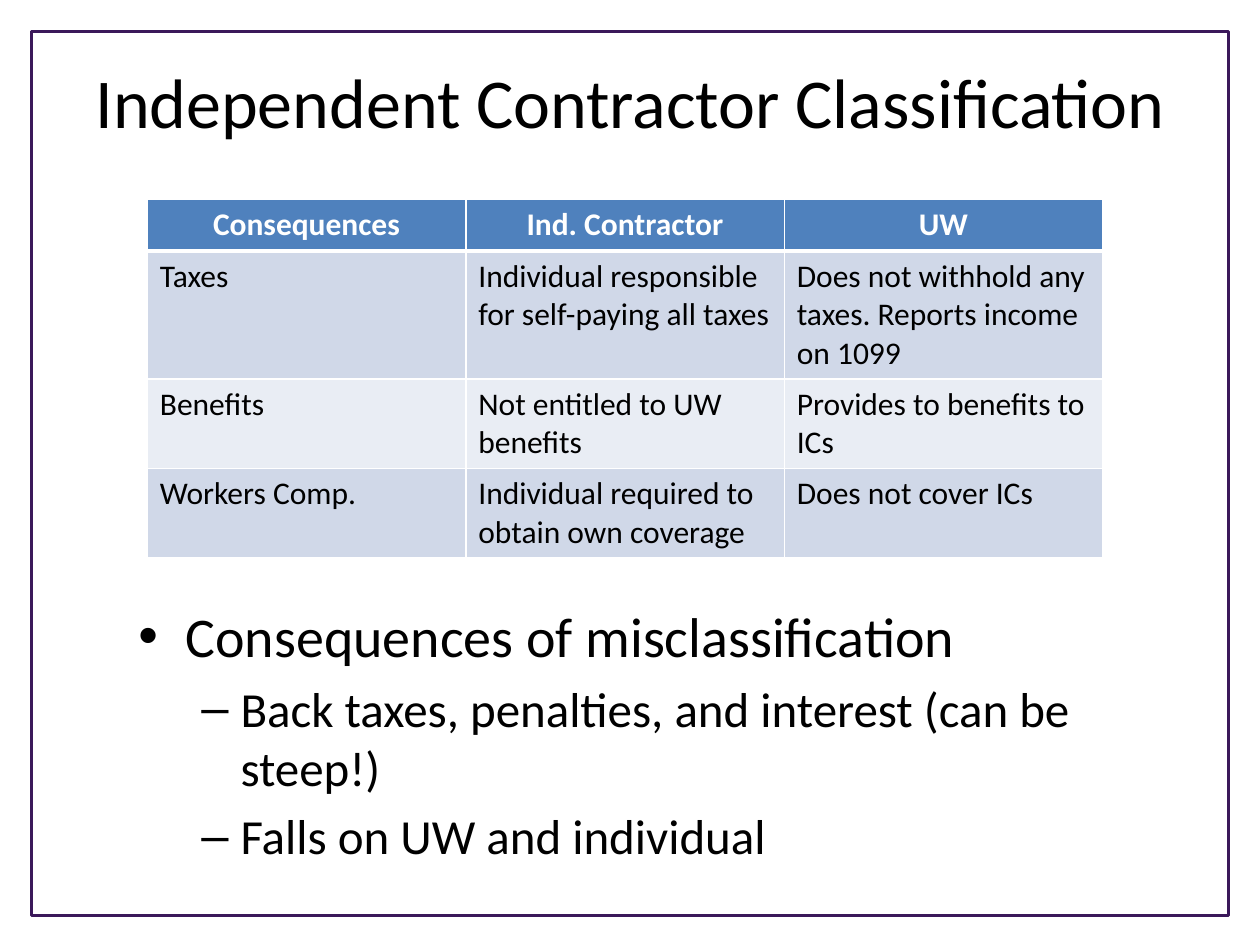
from lxml import etree
from pptx import Presentation
from pptx.dml.color import RGBColor
from pptx.enum.shapes import MSO_SHAPE
from pptx.enum.text import MSO_ANCHOR, PP_ALIGN
from pptx.oxml.ns import qn
from pptx.util import Cm, Pt

RECTANGLE = MSO_SHAPE.RECTANGLE
CENTER, LEFT = PP_ALIGN.CENTER, PP_ALIGN.LEFT
MIDDLE = MSO_ANCHOR.MIDDLE
TITLE_ONLY = 5
FONT = "Calibri"
COLORS = {
    "text": "000000",
    "white": "FFFFFF",
    "frame": "3B185A",
    "header": "4F81BD",
    "odd_row": "D0D8E8",
    "even_row": "E9EDF4",
}
TABLE_ROWS = [
    ("Consequences", "Ind. Contractor", "UW"),
    ("Taxes", "Individual responsible for self-paying all taxes",
     "Does not withhold any taxes. Reports income on 1099"),
    ("Benefits", "Not entitled to UW benefits", "Provides to benefits to ICs"),
    ("Workers Comp.", "Individual required to obtain own coverage", "Does not cover ICs"),
]
ROW_HEIGHTS = [1.04, 2.58, 1.8, 1.8]
BULLETS = [
    (0, "Consequences of misclassification"),
    (1, "Back taxes, penalties, and interest (can be steep!)"),
    (1, "Falls on UW and individual"),
]
BULLET_LEVELS = [
    {"mark": "•", "size": 32, "margin": 0.95, "hanging": 0.95},
    {"mark": "–", "size": 28, "margin": 2.06, "hanging": 0.79},
]


def color(name):
    return RGBColor.from_string(COLORS[name])


def set_font(paragraph, size, color_name="text", bold=False):
    paragraph.font.name = FONT
    paragraph.font.size = Pt(size)
    paragraph.font.bold = bold
    paragraph.font.color.rgb = color(color_name)


def add_frame(slide, left, top, width, height):
    frame = slide.shapes.add_shape(RECTANGLE, Cm(left), Cm(top), Cm(width), Cm(height))
    frame.shadow.inherit = False
    frame.fill.background()
    frame.line.color.rgb = color("frame")
    frame.line.width = Pt(1.75)


def place_title(slide, text, left, top, width, height):
    title = slide.shapes.title
    title.left, title.top, title.width, title.height = Cm(left), Cm(top), Cm(width), Cm(height)
    title.text_frame.text = text
    title.text_frame.vertical_anchor = MIDDLE
    paragraph = title.text_frame.paragraphs[0]
    paragraph.alignment = CENTER
    set_font(paragraph, 40)


def set_border(cell, side, points):
    properties = cell._tc.get_or_add_tcPr()
    line = etree.SubElement(properties, qn(f"a:ln{side}"), w=str(Pt(points)))
    fill = etree.SubElement(line, qn("a:solidFill"))
    etree.SubElement(fill, qn("a:srgbClr"), val=COLORS["white"])


def format_cell(cell, text, row_index):
    is_header = row_index == 0
    thick_side = {0: "B", 1: "T"}.get(row_index)
    for side in "LRTB":
        set_border(cell, side, 3 if side == thick_side else 1)
    cell.fill.solid()
    row_color = "odd_row" if row_index % 2 else "even_row"
    cell.fill.fore_color.rgb = color("header" if is_header else row_color)
    cell.text = text
    paragraph = cell.text_frame.paragraphs[0]
    paragraph.alignment = CENTER if is_header else LEFT
    set_font(paragraph, 18, "white" if is_header else "text", is_header)


def add_consequences_table(slide, left, top, width):
    column_count = len(TABLE_ROWS[0])
    table = slide.shapes.add_table(
        len(TABLE_ROWS), column_count, Cm(left), Cm(top), Cm(width), Cm(sum(ROW_HEIGHTS))
    ).table
    for column in table.columns:
        column.width = Cm(width / column_count)
    for row_index, (texts, height) in enumerate(zip(TABLE_ROWS, ROW_HEIGHTS)):
        table.rows[row_index].height = Cm(height)
        for column_index, text in enumerate(texts):
            format_cell(table.cell(row_index, column_index), text, row_index)


def add_bullets(slide, left, top, width, height):
    text_frame = slide.shapes.add_textbox(Cm(left), Cm(top), Cm(width), Cm(height)).text_frame
    text_frame.word_wrap = True
    for index, (level, text) in enumerate(BULLETS):
        style = BULLET_LEVELS[level]
        paragraph = text_frame.add_paragraph() if index else text_frame.paragraphs[0]
        paragraph.text = text
        paragraph.level = level
        paragraph.space_before = Pt(0.2 * style["size"] if index else 0)
        properties = paragraph._p.get_or_add_pPr()
        properties.set("marL", str(Cm(style["margin"])))
        properties.set("indent", str(-Cm(style["hanging"])))
        etree.SubElement(properties, qn("a:buFont"), typeface="Arial")
        etree.SubElement(properties, qn("a:buChar"), char=style["mark"])
        set_font(paragraph, style["size"])


def main():
    presentation = Presentation()
    presentation.slide_width, presentation.slide_height = Cm(25.4), Cm(19.05)
    slide = presentation.slides.add_slide(presentation.slide_layouts[TITLE_ONLY])
    add_frame(slide, 0.64, 0.64, 24.13, 17.82)
    place_title(slide, "Independent Contractor Classification", 0.64, 0.43, 24.13, 3.18)
    add_consequences_table(slide, 2.97, 4.02, 19.26)
    add_bullets(slide, 2.54, 12, 21.64, 6.19)
    presentation.save("out.pptx")


if __name__ == "__main__":
    main()
